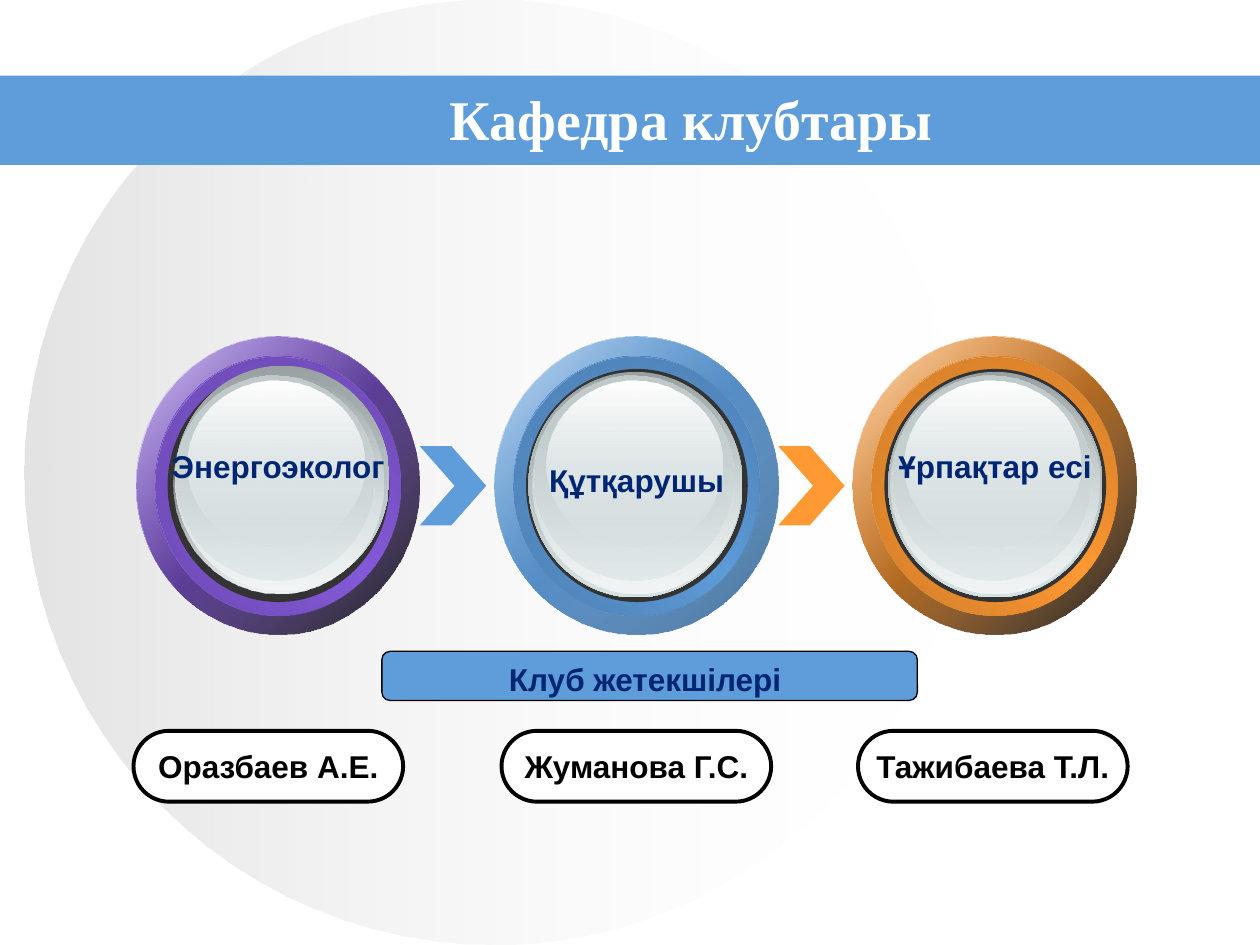
from dataclasses import dataclass

from lxml.etree import SubElement
from pptx import Presentation
from pptx.dml.color import RGBColor
from pptx.enum.shapes import MSO_SHAPE
from pptx.enum.text import MSO_ANCHOR, PP_ALIGN
from pptx.oxml.ns import qn
from pptx.util import Pt


@dataclass(frozen=True)
class Theme:
    white: str = "FFFFFF"
    black: str = "000000"
    blue: str = "5E9CDA"
    purple: str = "855ADA"
    orange: str = "FF9933"
    navy: str = "002673"
    charcoal: str = "333333"
    silver: str = "C0C0C0"
    glass: str = "D6E1E2"
    title_font: str = "Times New Roman"
    body_font: str = "Arial"
    title_size: int = 32
    body_size: int = 18


theme = Theme()

presentation = Presentation()
presentation.slide_width, presentation.slide_height = Pt(720), Pt(540)
slide = presentation.slides.add_slide(presentation.slide_layouts[6])


def add_filled(kind, box, fill, angle=0, line_width=0):
    """Fill is a colour, or a list of (position %, colour, opacity %) stops."""
    shape = slide.shapes.add_shape(kind, *map(Pt, box))
    shape.shadow.inherit = False
    if line_width:
        shape.line.color.rgb = RGBColor.from_string(theme.black)
        shape.line.width = Pt(line_width)
    else:
        shape.line.fill.background()
    if isinstance(fill, str):
        shape.fill.solid()
        shape.fill.fore_color.rgb = RGBColor.from_string(fill)
        return shape
    shape.fill.background()
    no_fill = shape._element.spPr.find(qn("a:noFill"))
    gradient = no_fill.makeelement(qn("a:gradFill"), {"rotWithShape": "1"})
    stops = SubElement(gradient, qn("a:gsLst"))
    for position, color, opacity in fill:
        stop = SubElement(stops, qn("a:gs"), pos=str(position * 1000))
        rgb = SubElement(stop, qn("a:srgbClr"), val=color)
        SubElement(rgb, qn("a:alpha"), val=str(opacity * 1000))
    SubElement(gradient, qn("a:lin"), ang=str(angle * 60000), scaled="0")
    no_fill.getparent().replace(no_fill, gradient)
    return shape


def write_text(shape, text, color, size=theme.body_size, font=theme.body_font, wrap=False):
    frame = shape.text_frame
    frame.word_wrap = wrap
    frame.vertical_anchor = MSO_ANCHOR.MIDDLE
    paragraph = frame.paragraphs[0]
    paragraph.alignment = PP_ALIGN.CENTER
    run = paragraph.add_run()
    run.text = text
    run.font.name, run.font.size, run.font.bold = font, Pt(size), True
    run.font.color.rgb = RGBColor.from_string(color)


# Background disc and title band
add_filled(MSO_SHAPE.OVAL, (14.2, 0, 535.7, 540),
           [(0, theme.silver, 44), (100, theme.white, 0)])
add_filled(MSO_SHAPE.RECTANGLE, (0, 43.2, 720, 51), theme.blue)
title = slide.shapes.add_textbox(Pt(137), Pt(48.5), Pt(516), Pt(38))
write_text(title, "Кафедра клубтары", theme.white, theme.title_size, theme.title_font, True)

# Clubs: name, colour, edge, rim, shade, shade opacity, disc offset, label top, leader, pill left
clubs = [
    ("Энергоэколог", theme.purple, "6645A7", "6D4AB3", theme.black, 90,
     (22.3, 16.6), 252, "Оразбаев А.Е.", 76.3),
    ("Құтқарушы", theme.blue, "4877A7", "4D80B3", "43709C", 100,
     (19.4, 20.2), 260, "Жуманова Г.С.", 286.6),
    ("Ұрпақтар есі", theme.orange, "C37527", "D17E2A", theme.black, 90,
     (20.2, 20.2), 252, "Тажибаева Т.Л.", 490.3),
]
ring_left, ring_top, ring_width, ring_height, ring_step = 77.8, 192.3, 162, 170, 204.8

for index, (name, color, edge, rim, shade, opacity, disc, label_top,
            leader, pill_left) in enumerate(clubs):
    left = ring_left + index * ring_step
    if index:
        chevron = add_filled(MSO_SHAPE.CHEVRON,
                             (left - ring_step + ring_width, 254.9, 38, 45.4), color)
        chevron.adjustments[0] = 0.525

    # Offset from the ring's corner, size, fill, gradient angle
    layers = [
        ((0, 0), (ring_width, ring_height),
         [(0, theme.white, 100), (50, color, 100), (100, theme.white, 100)], 45),
        ((0, 0), (ring_width, ring_height), [(0, color, 32), (100, shade, opacity)], 45),
        ((10.8, 11.2), (140.4, 148.3),
         [(0, edge, 100), (50, color, 100), (100, edge, 100)], 315),
        ((10.8, 11.2), (140.4, 148.3), [(0, rim, 100), (100, color, 0)], 45),
        ((18, 18.5), (126.7, 133.2), theme.charcoal, 0),
        (disc, (122.4, 128.9), [(0, "99A1A2", 100), (100, theme.glass, 100)], 90),
        ((21.6, 20.9), (119.5, 126), [(0, theme.glass, 0), (100, "F2F5F5", 100)], 90),
        ((22.5, 22.3), (113.8, 117.4), [(0, "C1CBCC", 100), (100, theme.glass, 48)], 90),
        ((29.5, 25.2), (100.8, 95.4), [(0, theme.white, 100), (100, theme.glass, 38)], 90),
    ]
    for (across, down), size, fill, angle in layers:
        add_filled(MSO_SHAPE.OVAL, (left + across, ring_top + down, *size), fill, angle)

    label = slide.shapes.add_textbox(Pt(left + 2), Pt(label_top), Pt(158.4), Pt(29))
    write_text(label, name, theme.navy, wrap=True)

    pill = add_filled(MSO_SHAPE.ROUNDED_RECTANGLE, (pill_left, 417.6, 154.1, 40.5),
                      theme.white, line_width=2.25)
    pill.adjustments[0] = 0.5
    write_text(pill, leader, theme.black)

# Heading above the club leaders
heading = add_filled(MSO_SHAPE.ROUNDED_RECTANGLE, (218.2, 372.2, 306, 28.1),
                     theme.blue, line_width=0.75)
write_text(heading, "Клуб жетекшілері", theme.navy, wrap=True)
heading.text_frame.vertical_anchor = MSO_ANCHOR.TOP
heading.text_frame.margin_right = Pt(12.2)

presentation.save("out.pptx")
